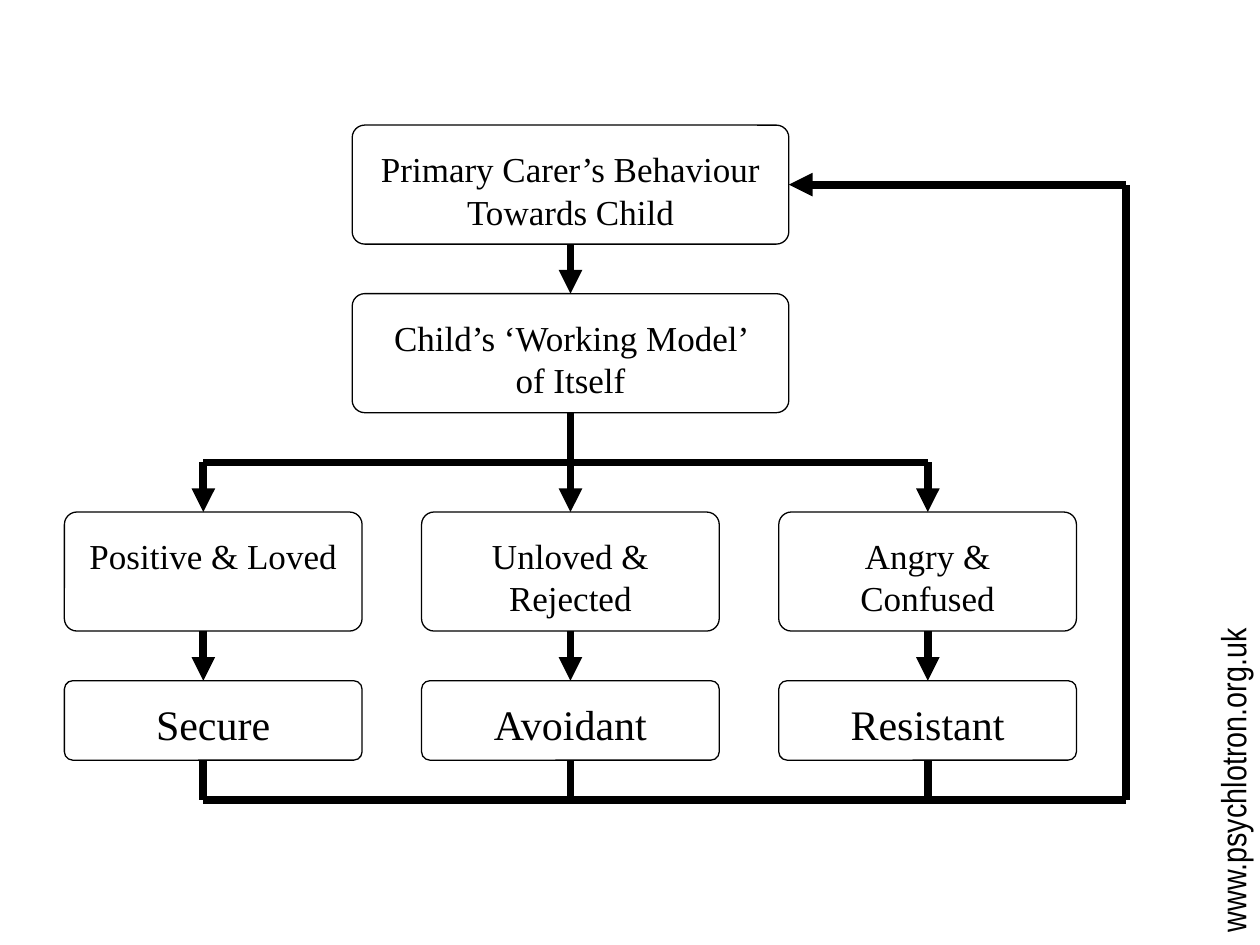
from pptx import Presentation
from pptx.dml.color import RGBColor
from pptx.enum.shapes import MSO_CONNECTOR, MSO_SHAPE
from pptx.enum.text import MSO_ANCHOR, PP_ALIGN
from pptx.oxml.ns import qn
from pptx.util import Pt
from lxml.etree import SubElement

BLACK, WHITE = "000000", "FFFFFF"
SERIF, NARROW = "Times New Roman", "Arial Narrow"
COLUMN_LEFTS = (36.8, 240.9, 445)
COLUMN_WIDTH = 170.1
STEMS = (116.2, 326, 530.2)
BRANCHES = (
    ("Positive & Loved", "Secure"),
    ("Unloved & Rejected", "Avoidant"),
    ("Angry & Confused", "Resistant"),
)
MODEL_LEFT, MODEL_WIDTH = 201.3, 249.5
CARER_TOP, MODEL_TOP, FEELING_TOP, TYPE_TOP = 71.5, 167.8, 292.6, 389
BOX_HEIGHT, TYPE_HEIGHT = 68, 45.4
SPLIT_Y, RETURN_X, RETURN_Y = 264.3, 643.5, 457


def color(value):
    """Turn a hex string into a colour."""
    return RGBColor.from_string(value)


def add_text(tf, text, size, font, align, margins):
    """Write one paragraph into a text frame."""
    tf.margin_left = tf.margin_right = Pt(margins[0])
    tf.margin_top, tf.margin_bottom = Pt(margins[1]), Pt(3.6)
    tf.vertical_anchor = MSO_ANCHOR.TOP
    p = tf.paragraphs[0]
    p.alignment = align
    r = p.add_run()
    r.text = text
    r.font.size = Pt(size)
    r.font.name = font
    r.font.color.rgb = color(BLACK)


def add_box(s, box, text, size=20, top_margin=11):
    """Draw a rounded box with centred text."""
    sp = s.shapes.add_shape(MSO_SHAPE.ROUNDED_RECTANGLE, *map(Pt, box))
    sp.adjustments[0] = 0.105
    sp.shadow.inherit = False
    sp.fill.solid()
    sp.fill.fore_color.rgb = color(WHITE)
    sp.line.color.rgb = color(BLACK)
    sp.line.width = Pt(0.75)
    sp.text_frame.word_wrap = True
    add_text(sp.text_frame, text, size, SERIF, PP_ALIGN.CENTER, (11.3, top_margin))


def add_line(s, x1, y1, x2, y2, arrow=False):
    """Draw a thick line, with an arrowhead at its end if asked."""
    line = s.shapes.add_connector(MSO_CONNECTOR.STRAIGHT, *map(Pt, (x1, y1, x2, y2)))
    line.line.color.rgb = color(BLACK)
    line.line.width = Pt(4.5)
    if arrow:
        SubElement(line.line._get_or_add_ln(), qn("a:tailEnd"), type="triangle")
    SubElement(line._element.spPr, qn("a:effectLst"))


def add_models(s, left, width):
    """Stack the carer and working model boxes."""
    add_box(s, (left, CARER_TOP, width, BOX_HEIGHT), "Primary Carer’s Behaviour Towards Child")
    add_box(s, (left, MODEL_TOP, width, BOX_HEIGHT), "Child’s ‘Working Model’ of Itself")
    add_line(s, STEMS[1], CARER_TOP + BOX_HEIGHT, STEMS[1], MODEL_TOP, True)
    add_line(s, STEMS[1], MODEL_TOP + BOX_HEIGHT, STEMS[1], SPLIT_Y)
    add_line(s, STEMS[0], SPLIT_Y, STEMS[-1], SPLIT_Y)


def add_branch(s, left, width, stem, feeling, attachment):
    """Draw one column from the split down to the return line."""
    add_box(s, (left, FEELING_TOP, width, BOX_HEIGHT), feeling)
    add_box(s, (left, TYPE_TOP, width, TYPE_HEIGHT), attachment, 24, 9)
    add_line(s, stem, SPLIT_Y, stem, FEELING_TOP, True)
    add_line(s, stem, FEELING_TOP + BOX_HEIGHT, stem, TYPE_TOP, True)
    add_line(s, stem, TYPE_TOP + TYPE_HEIGHT, stem, RETURN_Y)


def add_return(s, right, bottom):
    """Lead the feedback line back to the carer box."""
    carer_middle = CARER_TOP + BOX_HEIGHT / 2
    add_line(s, STEMS[0], bottom, right, bottom)
    add_line(s, right, bottom, right, carer_middle)
    add_line(s, right, carer_middle, MODEL_LEFT + MODEL_WIDTH, carer_middle, True)


def add_address(s, box):
    """Set the web address upright along the right edge."""
    tb = s.shapes.add_textbox(*map(Pt, box))
    tb.rotation = 270
    tb.text_frame.word_wrap = True
    add_text(tb.text_frame, "www.psychlotron.org.uk", 20, NARROW, PP_ALIGN.LEFT, (7.2, 3.6))


def main():
    """Build the slide and save it."""
    prs = Presentation()
    prs.slide_width, prs.slide_height = Pt(720), Pt(540)
    s = prs.slides.add_slide(prs.slide_layouts[6])
    add_models(s, MODEL_LEFT, MODEL_WIDTH)
    for left, stem, (feeling, attachment) in zip(COLUMN_LEFTS, STEMS, BRANCHES):
        add_branch(s, left, COLUMN_WIDTH, stem, feeling, attachment)
    add_return(s, RETURN_X, RETURN_Y)
    add_address(s, (604.1, 424.1, 200.2, 31))
    prs.save("out.pptx")


if __name__ == "__main__":
    main()
